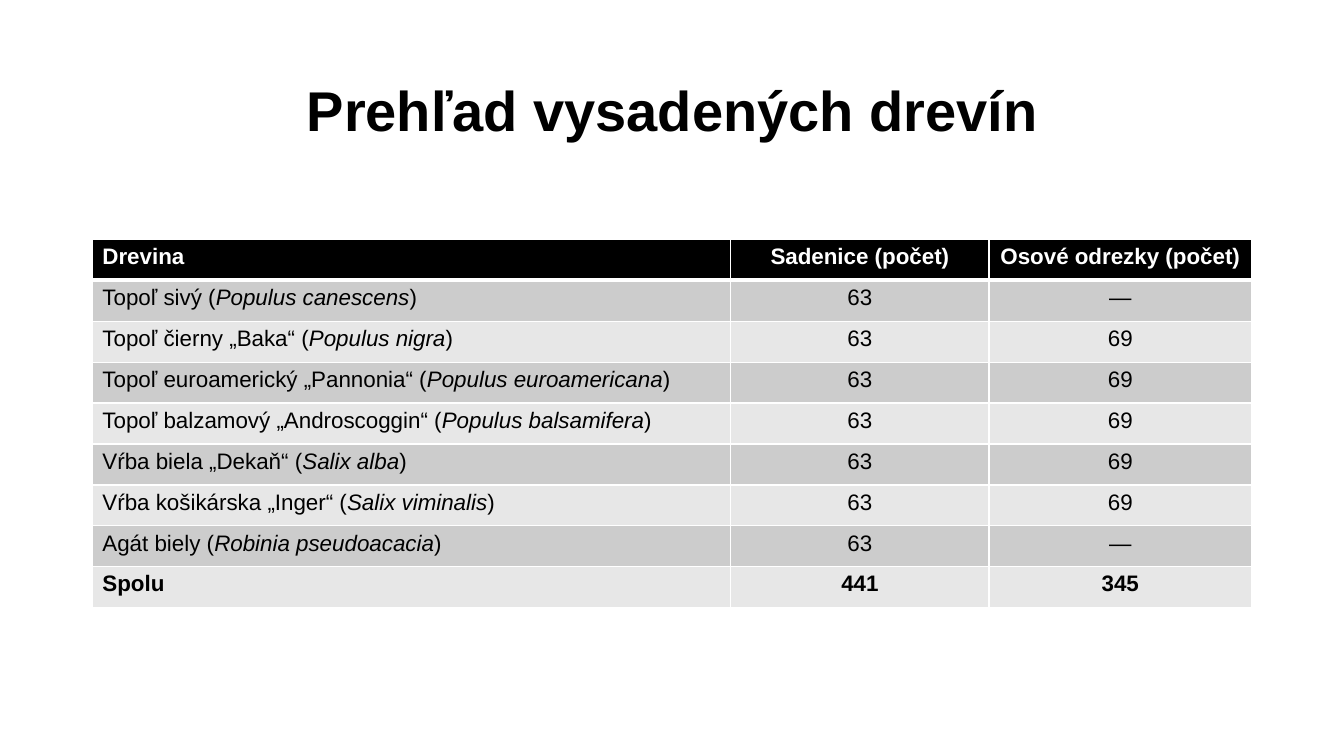
from dataclasses import dataclass
from typing import NamedTuple

from lxml.etree import SubElement
from pptx import Presentation
from pptx.dml.color import RGBColor
from pptx.enum.text import MSO_ANCHOR as Anchor, PP_ALIGN as Align
from pptx.oxml import parse_xml
from pptx.oxml.ns import nsdecls, qn
from pptx.util import Emu, Pt

EMU_PER_PX = 9525


@dataclass(frozen=True)
class Theme:
    font: str = "Arial"
    title_size: int = 40
    table_size: int = 16
    ink: str = "000000"
    paper: str = "FFFFFF"
    bands: tuple[str, str] = ("CCCCCC", "E7E7E7")
    rule: int = 1
    header_rule: int = 3


class Planting(NamedTuple):
    name: str
    latin: str
    seedlings: str
    cuttings: str


class Span(NamedTuple):
    text: str
    italic: bool = False


THEME = Theme()
TITLE = "Prehľad vysadených drevín"
HEADER = ("Drevina", "Sadenice (počet)", "Osové odrezky (počet)")
PLANTINGS = (
    Planting("Topoľ sivý", "Populus canescens", "63", "―"),
    Planting("Topoľ čierny „Baka“", "Populus nigra", "63", "69"),
    Planting("Topoľ euroamerický „Pannonia“", "Populus euroamericana", "63", "69"),
    Planting("Topoľ balzamový „Androscoggin“", "Populus balsamifera", "63", "69"),
    Planting("Vŕba biela „Dekaň“", "Salix alba", "63", "69"),
    Planting("Vŕba košikárska „Inger“", "Salix viminalis", "63", "69"),
    Planting("Agát biely", "Robinia pseudoacacia", "63", "―"),
)
TOTAL = ("Spolu", "441", "345")
LEFT, WIDTH = 88, 1104
COLUMN_WIDTHS = (608, 246, 250)
ROW_HEIGHT = 39


def px(length: int) -> Emu:
    return Emu(length * EMU_PER_PX)


def write(frame, *spans: Span, size: int, color: str, bold: bool = False,
          align: Align = Align.LEFT, line_spacing: float = 1.0) -> None:
    para = frame.paragraphs[0]
    para.alignment = align
    para.line_spacing = line_spacing
    for span in spans:
        run = para.add_run()
        run.text = span.text
        run.font.name = THEME.font
        run.font.size = Pt(size)
        run.font.bold = bold
        run.font.italic = span.italic
        run.font.color.rgb = RGBColor.from_string(color)


def set_borders(cell, top: int, bottom: int) -> None:
    properties = cell._tc.get_or_add_tcPr()
    widths = {"lnL": THEME.rule, "lnR": THEME.rule, "lnT": top, "lnB": bottom}
    for position, (side, width) in enumerate(widths.items()):
        line = parse_xml(f'<a:{side} {nsdecls("a")} w="{Pt(width)}"/>')
        fill = SubElement(line, qn("a:solidFill"))
        SubElement(fill, qn("a:srgbClr"), val=THEME.paper)
        properties.insert(position, line)


def add_title(page) -> None:
    box = page.shapes.title
    box.left, box.top, box.width, box.height = px(LEFT), px(38), px(WIDTH), px(139)
    box.text_frame.vertical_anchor = Anchor.MIDDLE
    write(box.text_frame, Span(TITLE), size=THEME.title_size, color=THEME.ink,
          bold=True, align=Align.CENTER, line_spacing=0.9)


def table_rows() -> list[tuple[tuple[Span, ...], ...]]:
    species = [
        ((Span(f"{item.name} ("), Span(item.latin, italic=True), Span(")")),
         (Span(item.seedlings),), (Span(item.cuttings),))
        for item in PLANTINGS
    ]
    header, total = (tuple((Span(text),) for text in row) for row in (HEADER, TOTAL))
    return [header, *species, total]


def add_planting_table(page) -> None:
    rows = table_rows()
    table = page.shapes.add_table(
        len(rows), len(COLUMN_WIDTHS), px(LEFT), px(228),
        px(WIDTH), px(ROW_HEIGHT * len(rows))).table
    for column, width in zip(table.columns, COLUMN_WIDTHS):
        column.width = px(width)
    for row_index, row in enumerate(rows):
        is_header = row_index == 0
        is_total = row_index == len(rows) - 1
        fill = THEME.ink if is_header else THEME.bands[(row_index - 1) % 2]
        for column_index, spans in enumerate(row):
            cell = table.cell(row_index, column_index)
            cell.fill.solid()
            cell.fill.fore_color.rgb = RGBColor.from_string(fill)
            set_borders(cell,
                        top=THEME.header_rule if row_index == 1 else THEME.rule,
                        bottom=THEME.header_rule if is_header else THEME.rule)
            write(cell.text_frame, *spans, size=THEME.table_size,
                  color=THEME.paper if is_header else THEME.ink,
                  bold=is_header or is_total,
                  align=Align.CENTER if column_index else Align.LEFT)


def main() -> None:
    deck = Presentation()
    deck.slide_width, deck.slide_height = px(1280), px(720)
    page = deck.slides.add_slide(deck.slide_layouts.get_by_name("Title Only"))
    add_title(page)
    add_planting_table(page)
    deck.save("out.pptx")


if __name__ == "__main__":
    main()
